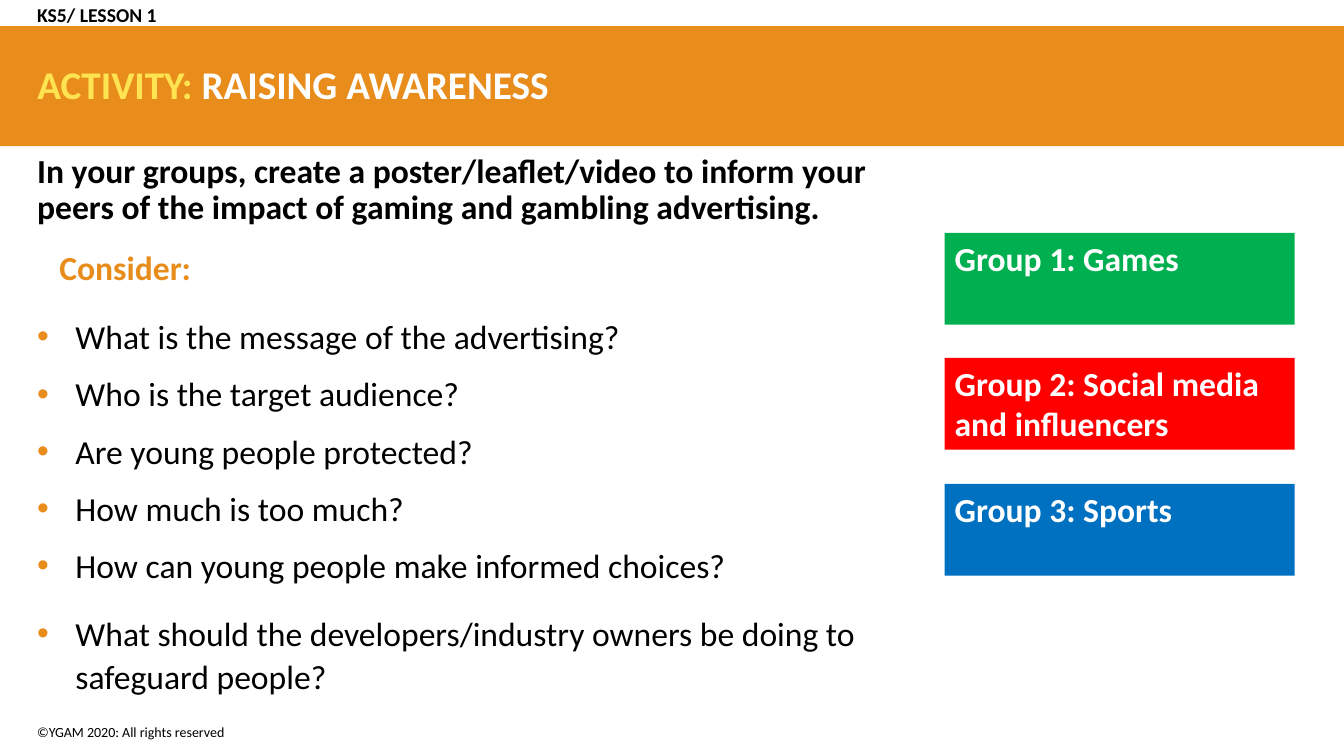
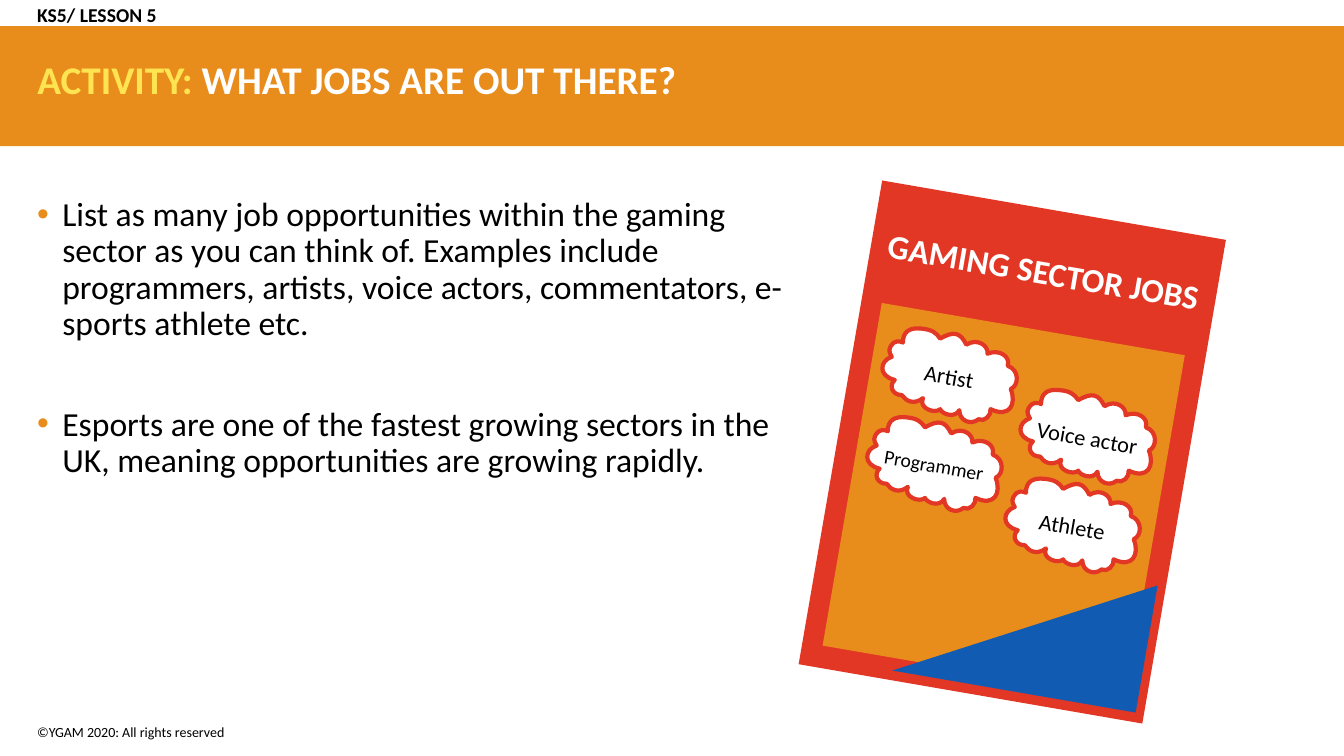
import math

import pptx
import pptx.dml.color
import pptx.enum.shapes
import pptx.enum.text
import pptx.oxml
import pptx.oxml.ns
import pptx.util

PX = 9144  # EMU in one px, 100 px to the inch
SLIDE_SIZE = (1333, 750)
ALIGN = pptx.enum.text.PP_ALIGN
ANCHOR = pptx.enum.text.MSO_ANCHOR
RECTANGLE = pptx.enum.shapes.MSO_SHAPE.RECTANGLE
NAMESPACE = pptx.oxml.ns.nsdecls("a")

THEME = {
    "font": "Calibri",
    "colors": {
        "orange": "E88C1C", "yellow": "FFE452", "white": "FFFFFF", "black": "000000",
        "green": "00B050", "red": "FF0000", "blue": "0070C0",
        "poster red": "E33725", "poster blue": "115CB2",
    },
    "sizes": {"title": 28, "body": 24, "cloud": 16, "small cloud": 14, "lesson": 14, "footer": 10},
}

# Paragraph styles: text size, colour, weight, indent in px, spacing in points
STYLES = {
    "title": {"size": "title", "color": "white", "bold": True, "line": 0.9},
    "lesson": {"size": "lesson", "bold": True, "line": 0.9},
    "footer": {"size": "footer"},
    "task": {"size": "body", "bold": True, "line": 0.9, "after": 8},
    "consider": {"size": "body", "color": "orange", "bold": True, "line": 0.9,
                 "before": 10, "after": 8, "indent": 22},
    "question": {"size": "body", "line": 1.07, "before": 10, "indent": 38, "bullet": True},
    "last questions": {"size": "body", "line": 1.07, "before": 10, "after": 8,
                       "indent": 38, "bullet": True},
    "first point": {"size": "body", "line": 0.9, "indent": 25, "bullet": True},
    "next point": {"size": "body", "line": 0.9, "before": 46, "indent": 25, "bullet": True},
    "group": {"size": "body", "color": "white", "bold": True},
    "poster title": {"size": "body", "color": "white", "bold": True, "align": ALIGN.CENTER},
    "cloud": {"size": "cloud", "align": ALIGN.CENTER},
    "small cloud": {"size": "small cloud", "align": ALIGN.CENTER},
}

# Content: boxes are left, top, width, height in px
BAND = (0, 26, 1333, 119)
FOOTER = ((27, 713, 564, 27), "©YGAM 2020: All rights reserved")
LESSON_BOX = (27, -6, 586, 44)
TITLE_PREFIX = "ACTIVITY: "
SLIDES = [
    {
        "lesson": "KS5/ LESSON 1",
        "title": "RAISING AWARENESS",
        "title box": (27, 27, 1276, 119),
        "body box": (27, 148, 855, 272),
        "body": [
            ("task", "In your groups, create a poster/leaflet/video to inform your peers "
                     "of the impact of gaming and gambling advertising."),
            ("consider", "Consider:"),
            ("question", "What is the message of the advertising?"),
            ("question", "Who is the target audience?"),
            ("question", "Are young people protected?"),
            ("question", "How much is too much?"),
            ("last questions", "How can young people make informed choices?"),
            ("last questions", "What should the developers/industry owners be doing "
                               "to safeguard people?"),
        ],
    },
    {
        "lesson": "KS5/ LESSON 5",
        "title": "WHAT JOBS ARE OUT THERE?",
        "title box": (27, 22, 1276, 119),
        "body box": (27, 191, 783, 249),
        "body": [
            ("first point", "List as many job opportunities within the gaming sector as you can "
                            "think of. Examples include programmers, artists, voice actors, "
                            "commentators, e-sports athlete etc."),
            ("next point", "Esports are one of the fastest growing sectors in the UK, "
                           "meaning opportunities are growing rapidly."),
        ],
    },
]
GROUPS = [
    ("Group 1: Games", "green"),
    ("Group 2: Social media and influencers", "red"),
    ("Group 3: Sports", "blue"),
]
GROUP_BOX, GROUP_LAST_TOP = (937, 231, 347, 91), 480

# Poster: everything on it is tilted by the same angle
TILT = 9.8
POSTER_PANELS = [((831, 205, 346, 487), "poster red"), ((843, 324, 305, 345), "orange")]
POSTER_TITLE = ((862, 244, 346, 50), "GAMING SECTOR JOBS")
POSTER_CORNER = ((894, 559, 245, 128), [(0, 128), (245, 128), (245, 0)])
CLOUDS = [
    [("cloud", "Artist"), ("cloud", "Voice actor")],
    [("small cloud", "Programmer"), ("cloud", "Athlete")],
]
CLOUD_BOX, CLOUD_COLUMN_STEP, CLOUD_ROW_STEP = (875, 331, 133, 84), (137, 61), (-15, 88)
# Tilted cloud outline about its centre: a start, then two controls and an end per curve
CLOUD_POINTS = [
    (-46, -33),
    (-46, -45), (-38, -48), (-28, -47), (-17, -46), (-13, -43), (-9, -37),
    (5, -45), (11, -43), (17, -31), (28, -38), (39, -30), (38, -22),
    (50, -27), (61, -19), (58, -10), (70, -6), (69, 10), (61, 13),
    (67, 28), (60, 42), (41, 33), (42, 39), (35, 46), (29, 43),
    (22, 49), (10, 45), (10, 34), (5, 43), (-8, 37), (-9, 33),
    (-14, 38), (-31, 32), (-26, 22), (-35, 29), (-43, 25), (-47, 19),
    (-57, 19), (-60, 9), (-54, 4), (-71, 0), (-69, -15), (-57, -19),
    (-60, -24), (-61, -27), (-55, -33), (-50, -36), (-46, -33), (-46, -33),
]


# Formatting helpers
def apply_format(target, values):
    for name, value in values.items():
        setattr(target, name, value)


def color(name):
    return pptx.dml.color.RGBColor.from_string(THEME["colors"][name])


def place(shape, box):
    apply_format(shape, dict(zip(("left", "top", "width", "height"), (n * PX for n in box))))


def paint(shape, fill, line=None):
    shape.shadow.inherit = False
    shape.fill.solid()
    shape.fill.fore_color.rgb = color(fill)
    if line:
        shape.line.color.rgb = color(line)
        shape.line.width = pptx.util.Pt(3)
    else:
        shape.line.fill.background()


def add_bullet(properties):
    orange = THEME["colors"]["orange"]
    for xml in (f'<a:buClr {NAMESPACE}><a:srgbClr val="{orange}"/></a:buClr>',
                f'<a:buFont {NAMESPACE} typeface="Arial"/>',
                f'<a:buChar {NAMESPACE} char="•"/>'):
        properties.append(pptx.oxml.parse_xml(xml))


def add_run(paragraph, text, style, color_name):
    run = paragraph.add_run()
    run.text = text
    apply_format(run.font, {
        "name": THEME["font"],
        "size": pptx.util.Pt(THEME["sizes"][style["size"]]),
        "bold": style.get("bold", False),
    })
    run.font.color.rgb = color(color_name)


def write(shape, paragraphs, anchor=ANCHOR.TOP, prefix=None):
    frame = shape.text_frame
    apply_format(frame, {"word_wrap": True, "vertical_anchor": anchor,
                         "auto_size": pptx.enum.text.MSO_AUTO_SIZE.NONE})
    for index, (style_name, text) in enumerate(paragraphs):
        style = STYLES[style_name]
        paragraph = frame.add_paragraph() if index else frame.paragraphs[0]
        properties = paragraph._p.get_or_add_pPr()
        indent = style.get("indent", 0) * PX
        properties.set("marL", str(indent))
        properties.set("indent", str(-indent if style.get("bullet") else 0))
        if style.get("bullet"):
            add_bullet(properties)
        apply_format(paragraph, {
            "alignment": style.get("align", ALIGN.LEFT),
            "line_spacing": style.get("line", 1.0),
            "space_before": pptx.util.Pt(style.get("before", 0)),
            "space_after": pptx.util.Pt(style.get("after", 0)),
        })
        if prefix:
            add_run(paragraph, prefix, style, "yellow")
        add_run(paragraph, text, style, style.get("color", "black"))


# Shape helpers
def add_rectangle(shapes, box, fill, tilt=0):
    shape = shapes.add_shape(RECTANGLE, *(n * PX for n in box))
    paint(shape, fill)
    shape.rotation = tilt
    return shape


def add_text(shapes, box, paragraphs, anchor=ANCHOR.TOP, tilt=0):
    shape = shapes.add_textbox(*(n * PX for n in box))
    write(shape, paragraphs, anchor)
    shape.rotation = tilt


def add_outline(shapes, box, points, fill, line=None):
    scaled = [(x * PX, y * PX) for x, y in points]
    builder = shapes.build_freeform(*scaled[0], scale=1.0)
    builder.add_line_segments(scaled[1:], close=True)
    shape = builder.convert_to_shape()
    place(shape, box)
    paint(shape, fill, line)
    shape.rotation = TILT
    return shape


def add_cloud(shapes, box, label):
    """Bend the outline into curves, upright within the box, as the shape itself is tilted."""
    shape = add_outline(shapes, box, CLOUD_POINTS, "white", "poster red")
    width, height = (n * PX for n in box[2:])
    cosine, sine = math.cos(math.radians(TILT)), math.sin(math.radians(TILT))
    start, *rest = [
        f'<a:pt x="{round(width / 2 + (x * cosine + y * sine) * PX)}" '
        f'y="{round(height / 2 + (y * cosine - x * sine) * PX)}"/>'
        for x, y in CLOUD_POINTS]
    curves = "".join(f'<a:cubicBezTo>{"".join(rest[first:first + 3])}</a:cubicBezTo>'
                     for first in range(0, len(rest), 3))
    outline = shape.element.find(".//" + pptx.oxml.ns.qn("a:path"))
    outline.getparent().replace(outline, pptx.oxml.parse_xml(
        f'<a:path {NAMESPACE} w="{width}" h="{height}">'
        f'<a:moveTo>{start}</a:moveTo>{curves}</a:path>'))
    write(shape, [label], ANCHOR.MIDDLE)


# Slide parts
def move_shared_parts(slide, layout):
    """Band and footer belong to the layout, behind its title."""
    title, *unused = layout.placeholders
    for placeholder in unused:
        placeholder.element.getparent().remove(placeholder.element)
    add_rectangle(slide.shapes, BAND, "orange")
    add_text(slide.shapes, FOOTER[0], [("footer", FOOTER[1])])
    for shape in list(slide.shapes)[-2:]:
        title.element.addprevious(shape.element)


def fill_slide(slide, content):
    title = slide.shapes.title
    place(title, content["title box"])
    write(title, [("title", content["title"])], ANCHOR.MIDDLE, TITLE_PREFIX)
    add_text(slide.shapes, LESSON_BOX, [("lesson", content["lesson"])], ANCHOR.MIDDLE)
    add_text(slide.shapes, content["body box"], content["body"])


def add_groups(slide):
    left, top, width, height = GROUP_BOX
    for index, (text, fill) in enumerate(GROUPS):
        offset = index * (GROUP_LAST_TOP - top) // (len(GROUPS) - 1)
        box = (left, top + offset, width, height)
        write(add_rectangle(slide.shapes, box, fill), [("group", text)])


def add_poster(slide):
    shapes = slide.shapes.add_group_shape().shapes
    for box, fill in POSTER_PANELS:
        add_rectangle(shapes, box, fill, TILT)
    add_text(shapes, POSTER_TITLE[0], [("poster title", POSTER_TITLE[1])], tilt=TILT)
    left, top, width, height = CLOUD_BOX
    for row, clouds in enumerate(CLOUDS):
        for column, label in enumerate(clouds):
            x, y = (column * across + row * down
                    for across, down in zip(CLOUD_COLUMN_STEP, CLOUD_ROW_STEP))
            add_cloud(shapes, (left + x, top + y, width, height), label)
    add_outline(shapes, *POSTER_CORNER, "poster blue")


def main():
    presentation = pptx.Presentation()
    presentation.slide_width, presentation.slide_height = (n * PX for n in SLIDE_SIZE)
    layout = presentation.slide_layouts[5]
    slides = [presentation.slides.add_slide(layout) for _ in SLIDES]
    move_shared_parts(slides[0], layout)
    for slide, content in zip(slides, SLIDES):
        fill_slide(slide, content)
    add_groups(slides[0])
    add_poster(slides[1])
    presentation.save("out.pptx")


if __name__ == "__main__":
    main()
